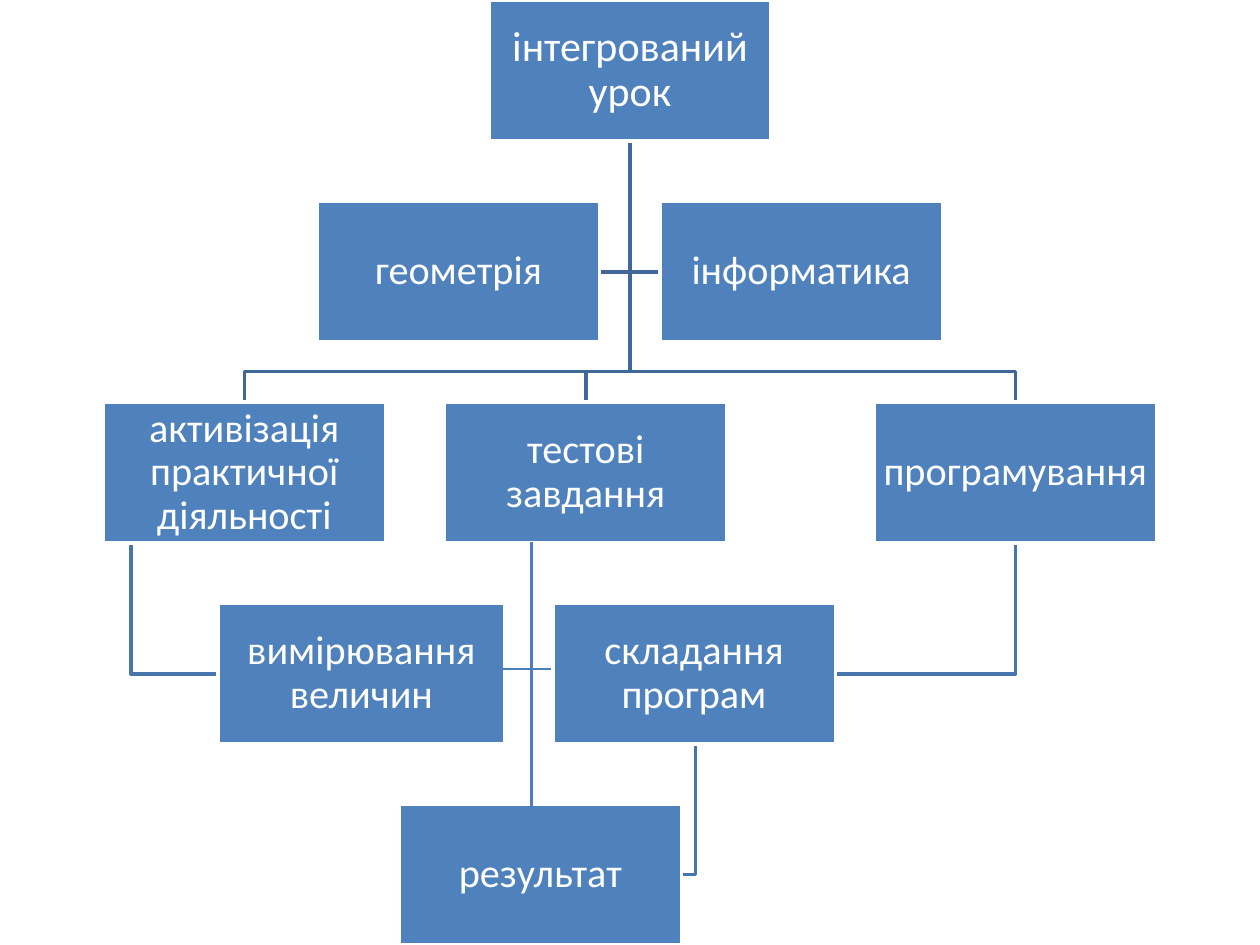
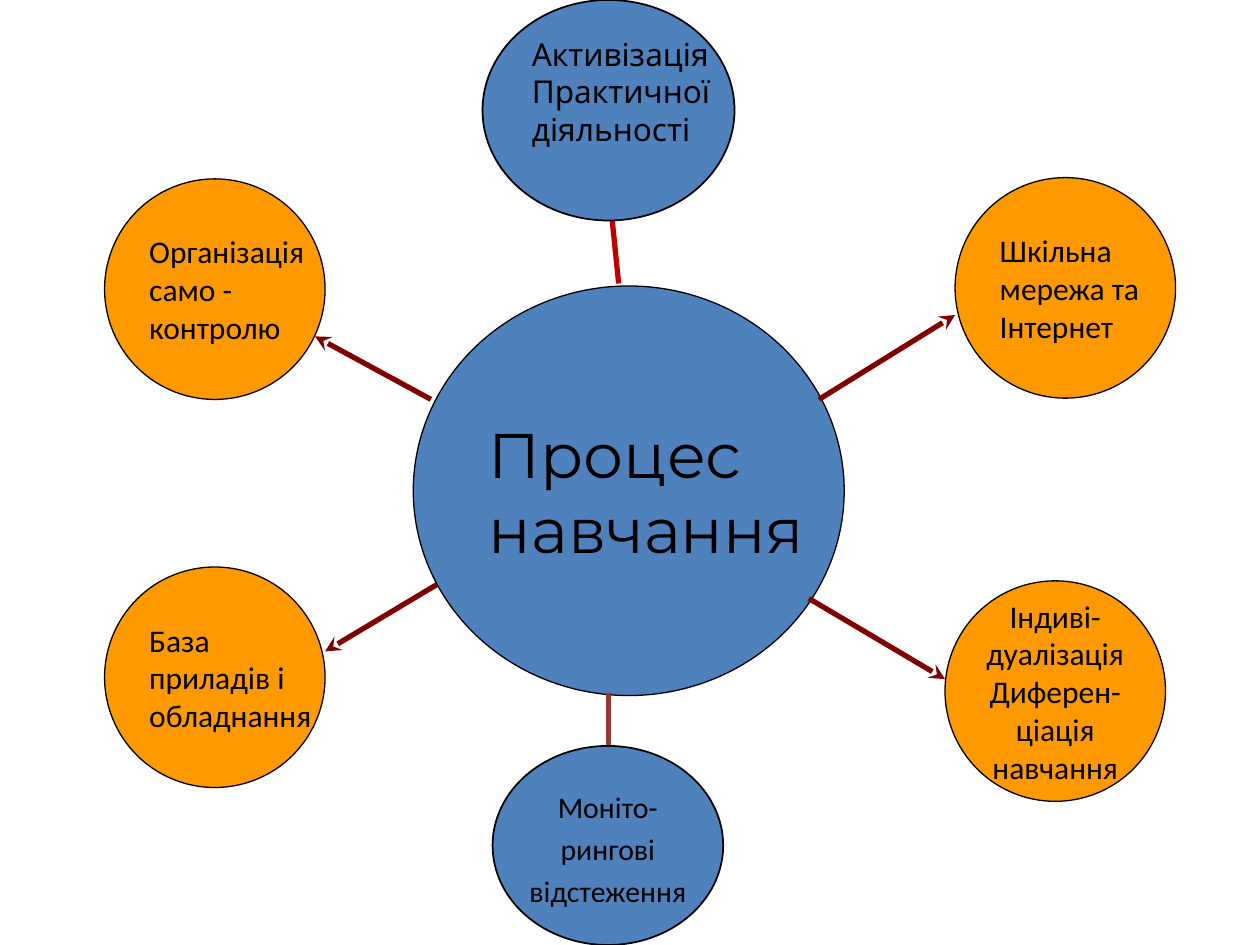
from dataclasses import dataclass

from lxml.etree import SubElement
from pptx import Presentation
from pptx.dml.color import RGBColor
from pptx.enum.shapes import MSO_CONNECTOR, MSO_SHAPE
from pptx.enum.text import MSO_ANCHOR, PP_ALIGN
from pptx.oxml.ns import qn
from pptx.util import Inches, Pt


@dataclass(frozen=True)
class Theme:
    blue: str = "4F81BD"
    orange: str = "FF9900"
    white: str = "FFFFFF"
    black: str = "000000"
    upper_link: str = "3F6797"
    lower_link: str = "4875AC"
    plain_link: str = "4B7EBC"
    arrow: str = "800000"
    top_spoke: str = "C00000"
    bottom_spoke: str = "953735"
    font: str = "Calibri"
    top_font: str = "Cabin"
    hub_font: str = "Montserrat"
    root_size: int = 24
    box_size: int = 23
    oval_size: int = 18
    small_size: int = 17
    hub_size: int = 36


class Diagram:
    """Draws diagram parts on slides, measured in a grid of 100 columns by 75 rows."""

    def __init__(self, theme):
        self.theme = theme
        self.deck = Presentation()
        self.deck.slide_width, self.deck.slide_height = Inches(10), Inches(7.5)
        self.cell = self.deck.slide_width // 100
        self.page = None

    def new_page(self):
        self.page = self.deck.slides.add_slide(self.deck.slide_layouts[6])

    def cells(self, *values):
        return [round(value * self.cell) for value in values]

    def stroke(self, item, color, width):
        item.line.color.rgb = RGBColor.from_string(color)
        item.line.width = Pt(width)

    def shape(self, kind, place, lines, fill, outline, ink, size, font=None,
              insets=(1, 0.5, 1, 0.5), wrap=True, centred=True, leading=None):
        item = self.page.shapes.add_shape(kind, *self.cells(*place))
        item.shadow.inherit = False
        item.fill.solid()
        item.fill.fore_color.rgb = RGBColor.from_string(fill)
        self.stroke(item, *outline)
        frame = item.text_frame
        frame.word_wrap = wrap
        frame.vertical_anchor = MSO_ANCHOR.MIDDLE
        (frame.margin_left, frame.margin_top,
         frame.margin_right, frame.margin_bottom) = self.cells(*insets)
        frame.text = "\n".join(lines)
        for para in frame.paragraphs:
            para.alignment = PP_ALIGN.CENTER if centred else PP_ALIGN.LEFT
            para.line_spacing = leading
            para.font.name = font or self.theme.font
            para.font.size = Pt(size)
            para.font.color.rgb = RGBColor.from_string(ink)

    def box(self, left, top, text, width=22.4, size=None):
        theme = self.theme
        self.shape(MSO_SHAPE.RECTANGLE, (left, top, width, 11.2), [text], theme.blue,
                   (theme.white, 2), theme.white, size or theme.box_size,
                   insets=(0.2,) * 4, leading=0.9)

    def oval(self, place, lines, fill, size=None, outline=0.75, **style):
        theme = self.theme
        self.shape(MSO_SHAPE.OVAL, place, lines, fill, (theme.black, outline),
                   theme.black, size or theme.oval_size, **style)

    def route(self, points, color):
        start, *rest = [self.cells(*point) for point in points]
        builder = self.page.shapes.build_freeform(*start, scale=1.0)
        builder.add_line_segments(rest, close=False)
        item = builder.convert_to_shape()
        item.shadow.inherit = False
        item.fill.background()
        self.stroke(item, color, 2)

    def line(self, ends, color, width, head=None):
        item = self.page.shapes.add_connector(MSO_CONNECTOR.STRAIGHT, *self.cells(*ends))
        self.stroke(item, color, width)
        properties = item._element.spPr
        if head:
            SubElement(properties.find(qn("a:ln")), qn("a:tailEnd"), type=head)
        SubElement(properties, qn("a:effectLst"))


def lesson_tree(diagram):
    theme = diagram.theme
    diagram.new_page()
    rows = [15.95 * level for level in range(5)]
    trunk, root_foot, fork = (50, 11.3), 21.6, 29.5
    for side in (52.4, 47.6):
        diagram.route([trunk, (50, root_foot), (side, root_foot)], theme.upper_link)
    for branch in (80.6, 46.5, 19.4):
        diagram.route([trunk, (50, fork), (branch, fork), (branch, rows[2])],
                      theme.upper_link)
    for start, turn, end in (((55.2, 59.1), 69.4, 54.1),
                             ((80.6, 43.1), 53.5, 66.4),
                             ((10.4, 43.1), 53.5, 17.3)):
        diagram.route([start, (start[0], turn), (end, turn)], theme.lower_link)

    diagram.box(38.8, rows[0], "інтегрований урок", size=theme.root_size)
    diagram.box(17.3, rows[3], "вимірювання величин", width=22.8)
    for left, level, text in ((25.2, 1, "геометрія"),
                              (52.4, 1, "інформатика"),
                              (8.2, 2, "активізація практичної діяльності"),
                              (35.3, 2, "тестові завдання"),
                              (69.4, 2, "програмування"),
                              (43.9, 3, "складання програм"),
                              (31.7, 4, "результат")):
        diagram.box(left, rows[level], text)
    diagram.line((39.8, 53.1, 43.7, 53.1), theme.plain_link, 0.75)
    diagram.line((42.2, 43, 42.2, 64.1), theme.plain_link, 2)


def learning_wheel(diagram):
    theme = diagram.theme
    diagram.new_page()
    loose = {"wrap": False, "centred": False}
    tight = {"insets": (0, 0.5, 0, 0.5)}
    for left, top, lines, style in (
            (75.8, 14.1, ["Шкільна", "мережа та", "Інтернет"], loose),
            (8.3, 14.2, ["Організація", "само -", "контролю"], loose),
            (8.3, 45, ["База", "приладів і", "обладнання"], loose),
            (75, 46.1, ["Індиві-", "дуалізація", "Диферен-", "ціація", "навчання"], tight)):
        diagram.oval((left, top, 17.5, 17.5), lines, theme.orange, **style)

    for ends in ((34.2, 31.7, 25, 26.7), (35, 46.2, 25.8, 51.7)):
        diagram.line(ends, theme.arrow, 3, "stealth")
    diagram.oval((32.8, 22.7, 34.2, 32.5), ["Процес", "навчання"], theme.blue,
                 size=theme.hub_size, font=theme.hub_font, **loose)
    for ends in ((64.2, 47.5, 75, 53.9), (65, 31.7, 75.8, 25)):
        diagram.line(ends, theme.arrow, 3, "stealth")

    diagram.line((48.3, 55, 48.3, 67.5), theme.bottom_spoke, 3, "triangle")
    diagram.oval((39.1, 59.2, 18.3, 15.8), ["Моніто-", "рингові", "відстеження"],
                 theme.blue, size=theme.small_size, outline=1, leading=Pt(24), **tight)
    diagram.line((49.1, 22.5, 48.4, 15.6), theme.top_spoke, 3, "triangle")
    diagram.oval((38.3, 0, 20, 17.5), ["Активізація", "Практичної", "діяльності"],
                 theme.blue, outline=1, font=theme.top_font,
                 insets=(1, 0.5, 1, 3.5), **loose)


def main():
    diagram = Diagram(Theme())
    lesson_tree(diagram)
    learning_wheel(diagram)
    diagram.deck.save("out.pptx")


if __name__ == "__main__":
    main()
